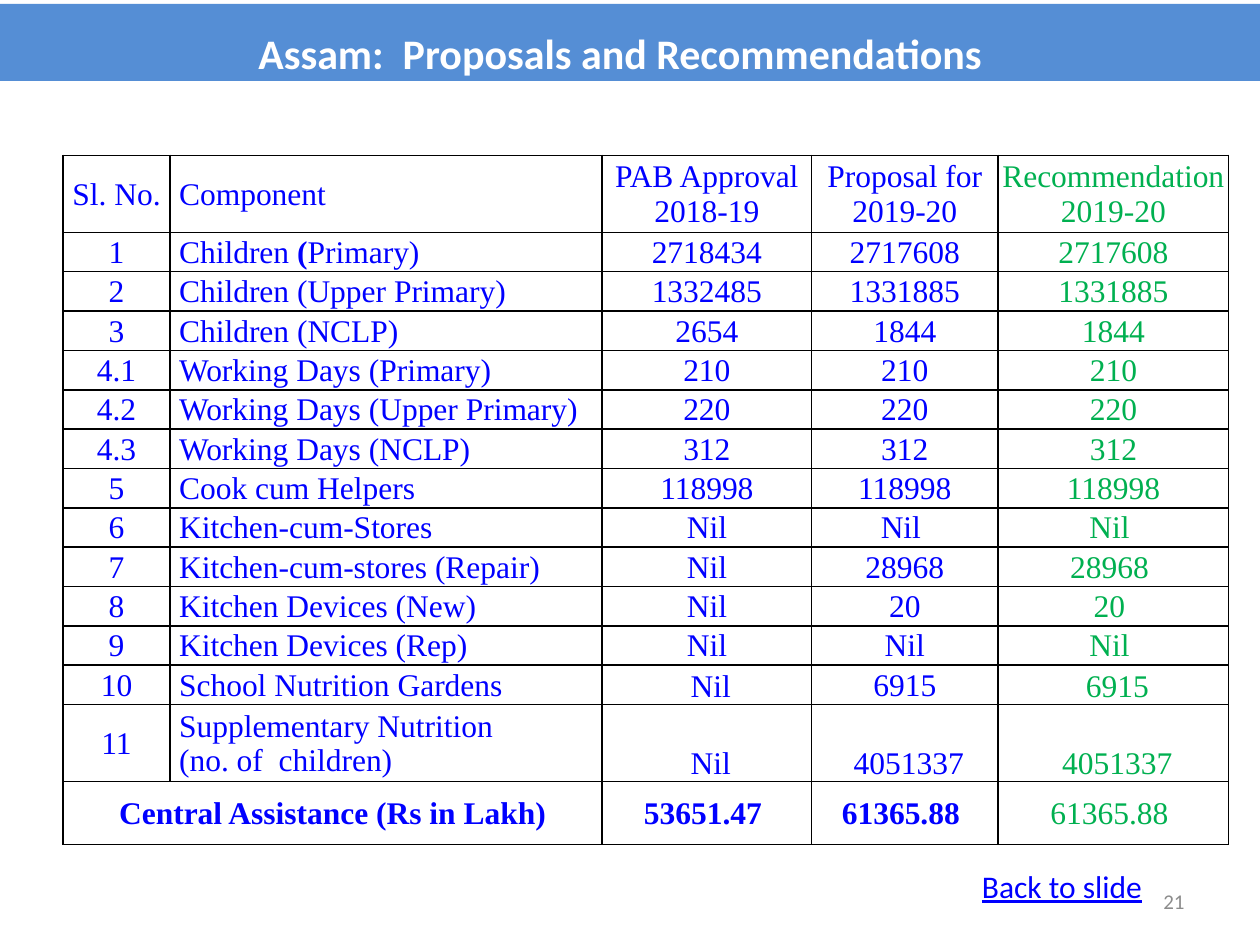
"""Build the Assam proposals and recommendations slide."""
from lxml import etree
from pptx import Presentation
from pptx import util as u
from pptx.dml.color import RGBColor
from pptx.enum import shapes, text
from pptx.oxml.ns import qn

BLUE, GREEN, WHITE, BLACK = "0000FF", "00B050", "FFFFFF", "000000"
SERIF, SANS = "Times New Roman", "Calibri"
CENTER, LEFT, RIGHT = text.PP_ALIGN.CENTER, text.PP_ALIGN.LEFT, text.PP_ALIGN.RIGHT
MIDDLE, BOTTOM = text.MSO_ANCHOR.MIDDLE, text.MSO_ANCHOR.BOTTOM
NBSP = chr(160)
COL_WIDTHS = [2.16, 8.71, 4.22, 3.76, 4.65]
ROW_HEIGHTS = [1.55] + [0.78] * 12 + [1.55, 1.27]
ROWS = [
    ["Sl. No.", "Component", "PAB Approval 2018-19", "Proposal for 2019-20",
     "Recommendation\n2019-20"],
    ["1", "Children (Primary)", "2718434", "2717608", "2717608"],
    ["2", "Children (Upper Primary)", "1332485", "1331885", "1331885"],
    ["3", "Children (NCLP)", "2654", "1844", "1844"],
    ["4.1", "Working Days (Primary)", "210", "210", "210"],
    ["4.2", "Working Days (Upper Primary)", "220", "220", "220"],
    ["4.3", "Working Days (NCLP)", "312", "312", "312"],
    ["5", "Cook cum Helpers", "118998", "118998", "118998"],
    ["6", "Kitchen-cum-Stores", "Nil", f"Nil{NBSP}", f"Nil{NBSP}"],
    ["7", "Kitchen-cum-stores (Repair)", "Nil", "28968", f"28968{NBSP}"],
    ["8", "Kitchen Devices (New)", "Nil", "20", f"20{NBSP}"],
    ["9", "Kitchen Devices (Rep)", "Nil", "Nil", f"Nil{NBSP}"],
    ["10", "School Nutrition Gardens", f"{NBSP}Nil", "6915", f"{NBSP}6915"],
    ["11", "Supplementary Nutrition\n(no. of  children)", f"{NBSP}Nil",
     f"{NBSP}4051337", f"{NBSP}4051337"],
    ["Central Assistance (Rs in Lakh)", "", f"53651.47{NBSP}",
     f"61365.88{NBSP}", f"61365.88{NBSP}"],
]


def rgb(value):
    """Turn a hex string into a colour."""
    return RGBColor.from_string(value)


def add_run(p, words, size, font, color, bold=False, underline=False):
    """Add one formatted run to a paragraph."""
    r = p.add_run()
    r.text = words
    r.font.size, r.font.name = u.Pt(size), font
    r.font.bold, r.font.underline = bold, underline
    r.font.color.rgb = rgb(color)


def add_label(s, box, words, size, color, anchor=text.MSO_ANCHOR.TOP, underline=False):
    """Add a right-aligned text box."""
    tf = s.shapes.add_textbox(*map(u.Cm, box)).text_frame
    tf.word_wrap, tf.vertical_anchor = True, anchor
    p = tf.paragraphs[0]
    p.alignment = RIGHT
    add_run(p, words, size, SANS, color, underline=underline)


def add_banner(s, box, words):
    """Add the full-width title band."""
    sp = s.shapes.add_shape(shapes.MSO_SHAPE.RECTANGLE, *map(u.Cm, box))
    sp.shadow.inherit = False
    sp.fill.solid()
    sp.fill.fore_color.rgb = rgb("558ED5")
    sp.line.fill.background()
    tf = sp.text_frame
    tf.word_wrap, tf.vertical_anchor = True, MIDDLE
    tf.margin_right = u.Cm(0.64)
    p = tf.paragraphs[0]
    p.alignment, p.line_spacing = CENTER, 1.4
    add_run(p, words, 24, SANS, WHITE, bold=True)


def add_borders(cell):
    """Draw a thin black line on all four sides of a cell."""
    tc_pr = cell._tc.get_or_add_tcPr()
    for side in ("lnL", "lnR", "lnT", "lnB"):
        ln = etree.SubElement(tc_pr, qn(f"a:{side}"), w=str(u.Pt(1)))
        fill = etree.SubElement(ln, qn("a:solidFill"))
        etree.SubElement(fill, qn("a:srgbClr"), val=BLACK)


def style_cell(cell, indent, anchor):
    """Set borders, fill, margins and anchor of a cell."""
    add_borders(cell)
    cell.fill.solid()
    cell.fill.fore_color.rgb = rgb(WHITE)
    cell.margin_left = u.Cm(indent)
    cell.margin_right = cell.margin_top = u.Cm(0.03)
    cell.margin_bottom = 0
    cell.vertical_anchor = anchor


def fill_cell(cell, words, align, color, bold):
    """Write the lines of a cell, one paragraph each."""
    tf = cell.text_frame
    for i, line in enumerate(words.split("\n")):
        p = tf.add_paragraph() if i else tf.paragraphs[0]
        p.alignment = align
        before, bracket, after = line.partition(" (Primary)")
        if bracket and before == "Children":
            add_run(p, before, 18, SERIF, color)
            add_run(p, " (", 18, SERIF, color, bold=True)
            add_run(p, "Primary)", 18, SERIF, color)
        else:
            add_run(p, line, 18, SERIF, color, bold)


def add_component_table(s, left, top):
    """Add the table of components with its merged total row."""
    last = len(ROWS) - 1
    frame = s.shapes.add_table(len(ROWS), len(COL_WIDTHS), u.Cm(left), u.Cm(top),
                               u.Cm(sum(COL_WIDTHS)), u.Cm(sum(ROW_HEIGHTS)))
    table = frame.table
    for column, width in zip(table.columns, COL_WIDTHS):
        column.width = u.Cm(width)
    for row, height in zip(table.rows, ROW_HEIGHTS):
        row.height = u.Cm(height)
    table.cell(last, 0).merge(table.cell(last, 1))
    for i, row in enumerate(ROWS):
        for j, words in enumerate(row):
            cell = table.cell(i, j)
            is_name = j == 1
            anchor = BOTTOM if words.startswith(NBSP) else MIDDLE
            style_cell(cell, 0.18 if is_name else 0.03, anchor)
            if words:
                fill_cell(cell, words, LEFT if is_name else CENTER,
                          GREEN if j == 4 else BLUE, i == last and j < 4)


def main():
    """Build and save the slide."""
    prs = Presentation()
    prs.slide_width, prs.slide_height = u.Cm(25.4), u.Cm(19.05)
    s = prs.slides.add_slide(prs.slide_layouts[6])
    add_label(s, (18.2, 17.66, 5.93, 1.01), "21", 12, "8C8C8C", anchor=MIDDLE)
    add_banner(s, (0, 0.08, 25.4, 1.55), "Assam:  Proposals and Recommendations")
    add_component_table(s, 1.27, 3.13)
    add_label(s, (17.27, 17.35, 6, 1.03), "Back to slide", 18, BLUE, underline=True)
    prs.save("out.pptx")


if __name__ == "__main__":
    main()
